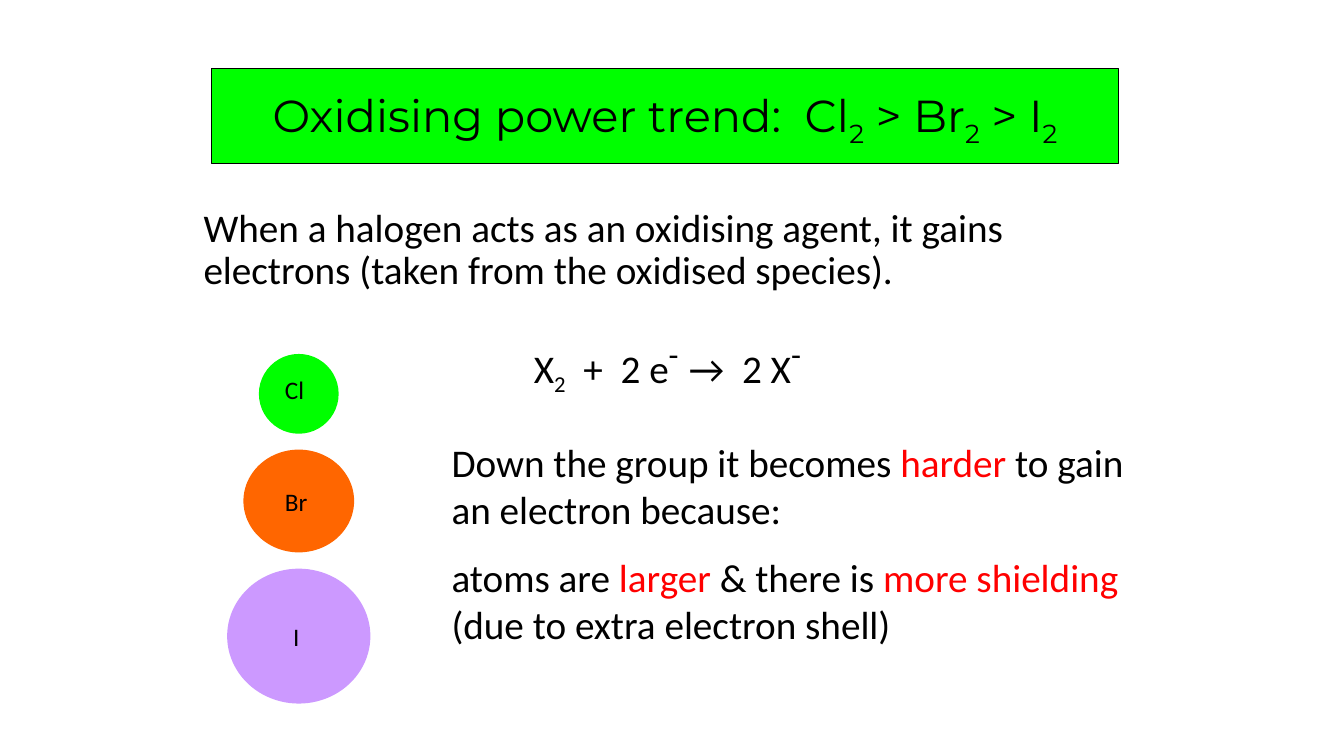
from dataclasses import dataclass

from pptx import Presentation, util as u
from pptx.dml import color
from pptx.enum import shapes, text

BLACK, RED, GREEN = "000000", "FF0000", "00FF00"
SUB, SUP = -25000, 30000


@dataclass
class Bit:
    words: str
    hue: str = BLACK
    base: int = 0
    size: float = 28


@dataclass
class Para:
    bits: list[Bit]
    form: dict


@dataclass
class Atom:
    name: str
    hue: str
    top: float
    wide: float
    high: float
    left: float  # label
    high_at: float  # label top


def rgb(code: str) -> color.RGBColor:
    return color.RGBColor.from_string(code)


def paint(shape, code: str) -> None:
    shape.fill.solid()
    shape.fill.fore_color.rgb = rgb(code)


def write(frame, paras: list[Para], face: str = "Calibri") -> None:
    for i, para in enumerate(paras):
        p = frame.add_paragraph() if i else frame.paragraphs[0]
        for key, value in para.form.items():
            setattr(p, key, value)
        for bit in para.bits:
            run = p.add_run()
            run.text = bit.words
            for key, value in {"name": face, "size": u.Pt(bit.size)}.items():
                setattr(run.font, key, value)
            run.font.color.rgb = rgb(bit.hue)
            if bit.base:
                run._r.get_or_add_rPr().set("baseline", str(bit.base))


def add_box(slide, spot: tuple, paras: list[Para]) -> None:
    box = slide.shapes.add_textbox(*map(u.Cm, spot))
    box.text_frame.word_wrap = True
    write(box.text_frame, paras)


def add_atom(slide, atom: Atom, mid: float) -> None:
    spot = (mid - atom.wide / 2, atom.top, atom.wide, atom.high)
    ball = slide.shapes.add_shape(shapes.MSO_SHAPE.OVAL, *map(u.Cm, spot))
    paint(ball, atom.hue)
    ball.line.fill.background()
    ball.shadow.inherit = False
    label = Para([Bit(atom.name, size=18)], {})
    add_box(slide, (atom.left, atom.high_at, 1.68, 1.02), [label])


def add_title(slide) -> None:
    title = slide.shapes.title
    spot = {"left": 5.33, "top": 1.73, "width": 22.86, "height": 2.39}
    for key, value in spot.items():
        setattr(title, key, u.Cm(value))
    paint(title, GREEN)
    title.line.color.rgb = rgb(BLACK)
    title.line.width = u.Pt(0.75)
    title.text_frame.vertical_anchor = text.MSO_ANCHOR.MIDDLE
    bits = []
    for words in ("Oxidising power trend:  Cl", " > Br", " > I"):
        bits += [Bit(words, size=32), Bit("2", base=SUB, size=32)]
    form = {"alignment": text.PP_ALIGN.CENTER, "line_spacing": 0.9}
    write(title.text_frame, [Para(bits, form)], "Montserrat")


def main() -> None:
    deck = Presentation()
    deck.slide_width, deck.slide_height = u.Cm(33.87), u.Cm(19.05)
    slide = deck.slides.add_slide(deck.slide_layouts[5])
    add_title(slide)

    # Statement and half equation
    minus = Bit("-", base=SUP, size=40)
    lead = Para(
        [Bit("When a halogen acts as an oxidising agent, it gains electrons "
             "(taken from the oxidised species).")],
        {"line_spacing": 0.9, "space_before": u.Pt(10)},
    )
    half = Para(
        [Bit("X"), Bit("2", base=SUB), Bit("  +  2 e"), minus,
         Bit("  ", base=SUP), Bit("→  2 X"), minus],
        {"line_spacing": 0.9, "space_before": u.Pt(28),
         "alignment": text.PP_ALIGN.CENTER},
    )
    add_box(slide, (4.88, 5.13, 23.88, 4.88), [lead, half])

    # Reasons
    trend = Para([Bit("Down the group it becomes "), Bit("harder", RED),
                  Bit(" to gain an electron because:")], {})
    cause = Para([Bit("atoms are "), Bit("larger", RED), Bit(" & there is "),
                  Bit("more shielding", RED),
                  Bit(" (due to extra electron shell)")],
                 {"space_before": u.Pt(14.6)})
    add_box(slide, (11.13, 10.92, 17.81, 5.51), [trend, cause])

    # Atoms growing down the group
    for atom in (
        Atom("Cl", GREEN, 8.92, 2.01, 2.01, 6.93, 9.32),
        Atom("Br", "FF6600", 11.33, 2.79, 2.59, 6.93, 12.12),
        Atom("I", "CC99FF", 14.33, 3.61, 3.4, 7.14, 15.52),
    ):
        add_atom(slide, atom, 7.53)

    deck.save("out.pptx")


if __name__ == "__main__":
    main()
